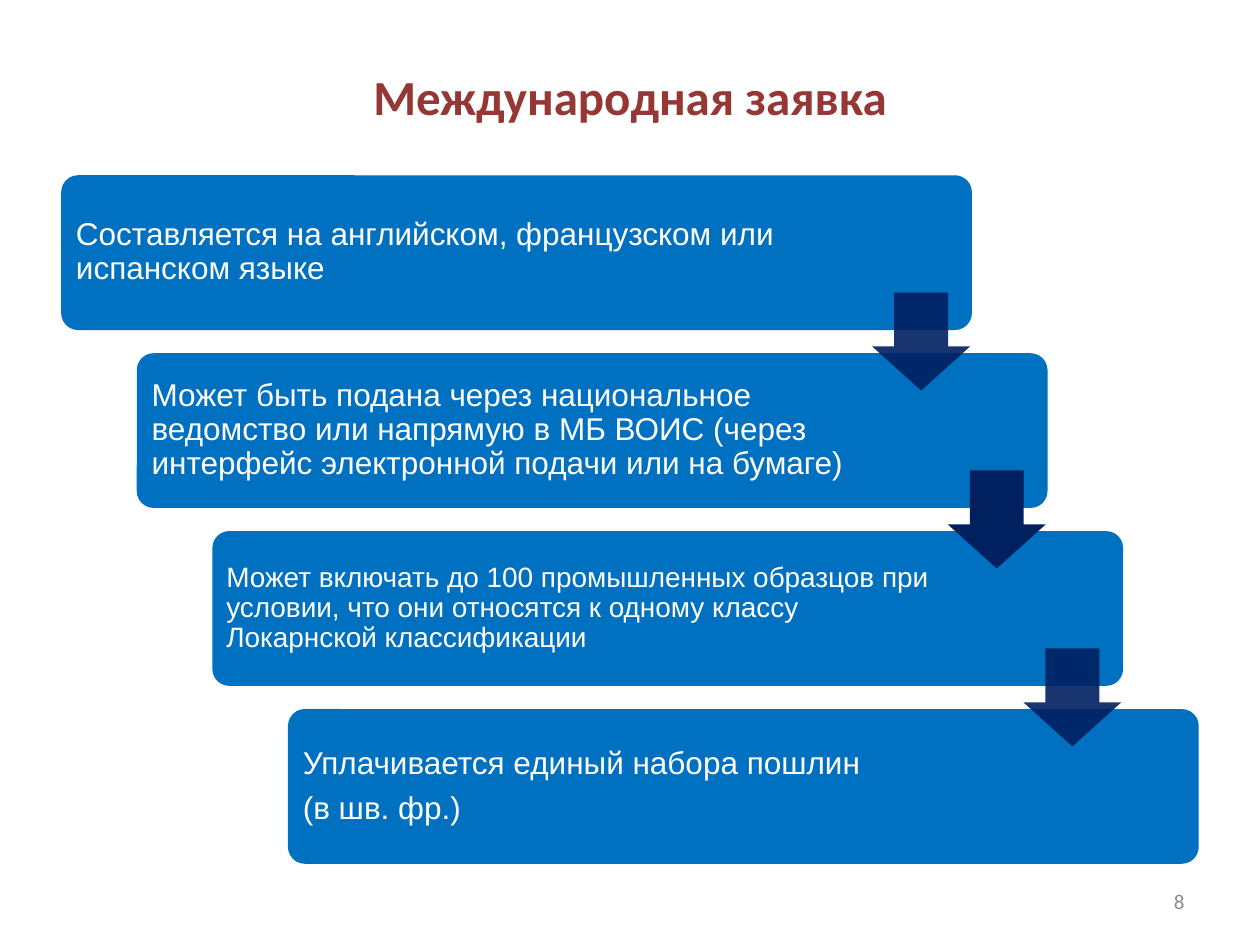
from lxml import etree
from pptx import Presentation
from pptx.dml.color import RGBColor
from pptx.enum.shapes import MSO_SHAPE
from pptx.enum.text import MSO_ANCHOR, PP_ALIGN
from pptx.oxml.ns import qn
from pptx.util import Pt

ROUNDED = MSO_SHAPE.ROUNDED_RECTANGLE
DOWN_ARROW = MSO_SHAPE.DOWN_ARROW
MIDDLE = MSO_ANCHOR.MIDDLE
LEFT, CENTER, RIGHT = PP_ALIGN.LEFT, PP_ALIGN.CENTER, PP_ALIGN.RIGHT

COLORS = {"title": "953735", "step": "0070C0", "arrow": "002060",
          "text": "FFFFFF", "number": "8C8C8C"}

STEPS = [
    (["Составляется на английском, французском или испанском языке"], 18),
    (["Может быть подана через национальное ведомство или напрямую в МБ ВОИС "
      "(через интерфейс электронной подачи или на бумаге)"], 18),
    (["Может включать до 100 промышленных образцов при условии, что они "
      "относятся к одному классу Локарнской классификации"], 16),
    (["Уплачивается единый набора пошлин", "(в шв. фр.)"], 18),
]
ARROW_ALPHAS = [90, 100, 90]


def rgb(name):
    """Return the named palette colour."""
    return RGBColor.from_string(COLORS[name])


def add_text(slide, paragraphs, x, y, w, h, size, color, font="Arial",
             bold=False, align=LEFT, inset=(7.2, 3.6), spacing=1.0, after=0):
    """Add a vertically centred text box."""
    tf = slide.shapes.add_textbox(Pt(x), Pt(y), Pt(w), Pt(h)).text_frame
    tf.word_wrap = True
    tf.vertical_anchor = MIDDLE
    tf.margin_left = tf.margin_right = Pt(inset[0])
    tf.margin_top = tf.margin_bottom = Pt(inset[1])
    for i, text in enumerate(paragraphs):
        p = tf.add_paragraph() if i else tf.paragraphs[0]
        p.alignment = align
        p.line_spacing = spacing
        p.space_after = Pt(after)
        r = p.add_run()
        r.text = text
        r.font.name = font
        r.font.size = Pt(size)
        r.font.bold = bold
        r.font.color.rgb = rgb(color)


def add_block(slide, kind, x, y, w, h, color, adjustments):
    """Add a filled preset shape without outline or shadow."""
    sp = slide.shapes.add_shape(kind, Pt(x), Pt(y), Pt(w), Pt(h))
    sp.shadow.inherit = False
    for i, value in enumerate(adjustments):
        sp.adjustments[i] = value
    sp.fill.solid()
    sp.fill.fore_color.rgb = rgb(color)
    sp.line.fill.background()
    return sp


def add_step(slide, x, y, w, h, paragraphs, size):
    """Add one rounded step with its text on the left."""
    sp = add_block(slide, ROUNDED, x, y, w, h, "step", [0.1])
    sp.line.color.rgb = rgb("step")
    sp.line.width = Pt(2)
    add_text(slide, paragraphs, x + 2.6, y + 2.5, 0.8 * w, h - 5, size, "text",
             inset=(0.27 * size, 0.27 * size), spacing=0.9, after=0.35 * size)


def add_arrow(slide, x, y, side, alpha):
    """Add one down arrow with the given opacity in percent."""
    sp = add_block(slide, DOWN_ARROW, x, y, side, side, "arrow", [0.55, 0.45])
    if alpha < 100:
        clr = sp.fill._xPr.find(qn("a:solidFill"))[0]
        etree.SubElement(clr, qn("a:alpha"), val=str(alpha * 1000))


def add_staircase(slide, x, y, w, h):
    """Add descending steps joined by arrows within the box."""
    step_w, step_h, side = 518.4, 86.4, 56
    dx = (w - step_w) / (len(STEPS) - 1)
    dy = (h - step_h) / (len(STEPS) - 1)
    for i, (paragraphs, size) in enumerate(STEPS):
        add_step(slide, x + i * dx, y + i * dy, step_w, step_h,
                 paragraphs, size)
    for i, alpha in enumerate(ARROW_ALPHAS):
        add_arrow(slide, x + step_w - side + i * dx, y + 66 + i * dy,
                  side, alpha)


def main():
    """Build the slide and save it."""
    prs = Presentation()
    prs.slide_width, prs.slide_height = Pt(720), Pt(540)
    slide = prs.slides.add_slide(prs.slide_layouts[6])
    add_text(slide, ["Международная заявка"], 36, 21.6, 648, 67, 28, "title",
             font="Calibri", bold=True, align=CENTER)
    add_staircase(slide, 36, 101.2, 648, 391.4)
    add_text(slide, ["8"], 516, 500.5, 168, 28.8, 12, "number",
             font="Calibri", align=RIGHT)
    prs.save("out.pptx")


if __name__ == "__main__":
    main()
